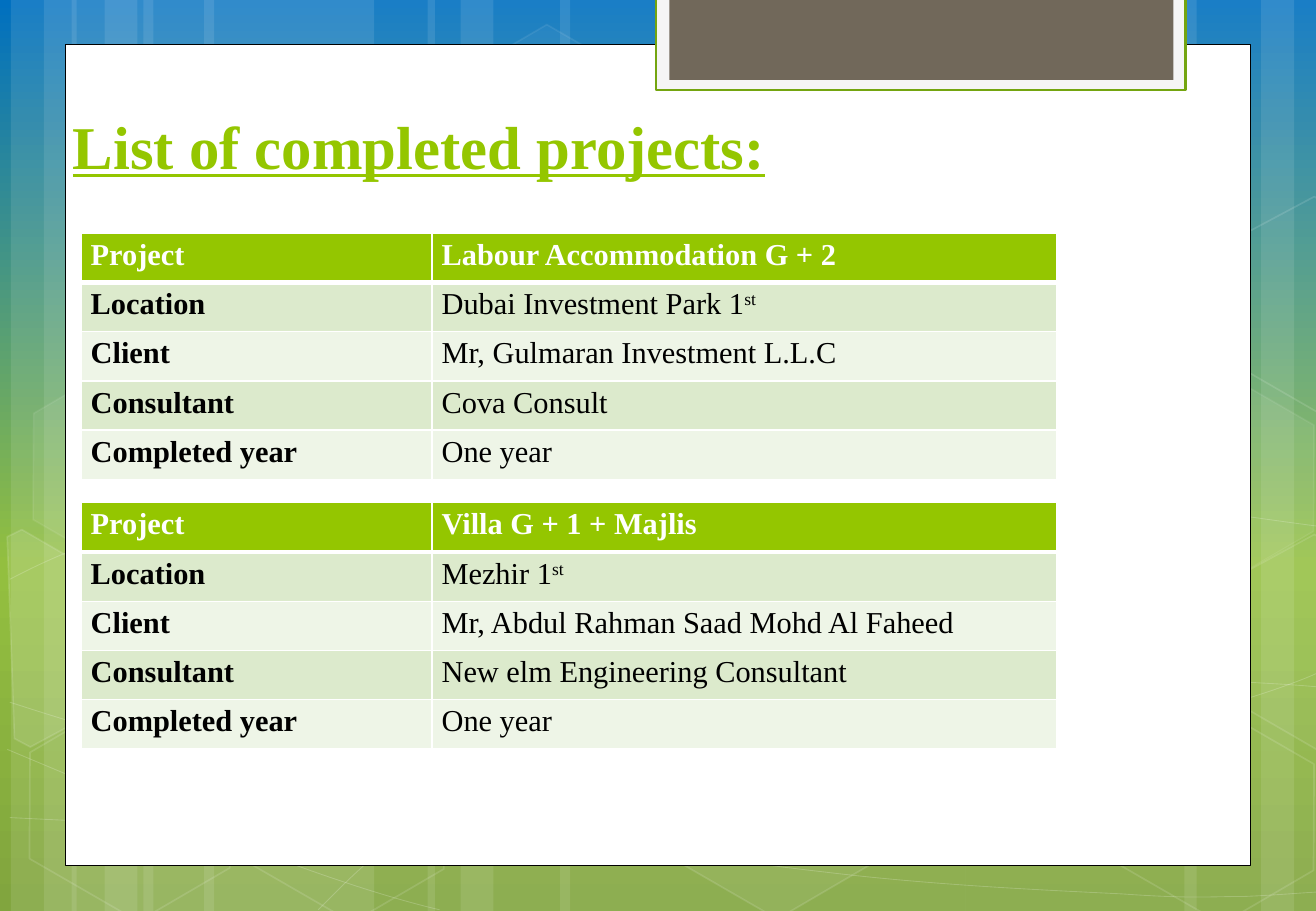
from copy import deepcopy
from dataclasses import dataclass
from typing import Optional

from lxml import etree
from pptx import Presentation
from pptx import util as u
from pptx.dml.color import RGBColor
from pptx.enum import shapes, text
from pptx.oxml.ns import qn

Point = tuple[float, float]
FONT = "Times New Roman"
COLOURS = {
    "white": "FFFFFF", "black": "000000", "lime": "94C600", "band": "DCEACC",
    "pale band": "EEF5E7", "tab": "F5F5F5", "tab edge": "74A510", "brown": "71685A",
    "sky": "0070C0", "grass": "93BF3F", "moss": "81A53E",
}
BACKDROP = [("sky", 0), ("grass", 62), ("moss", 100)]
FIELDS = ["Project", "Location", "Client", "Consultant", "Completed year"]


@dataclass
class Panel:
    left: float
    top: float
    width: float
    height: float
    fill: str
    edge: Optional[str] = None
    edge_width: float = 0


@dataclass
class Hexagon:
    left: float
    top: float
    fill_alpha: Optional[int]
    edge_alpha: int


@dataclass
class Shard:
    corners: list[Point]
    fill_alpha: Optional[int]


@dataclass
class Project:
    top: float
    details: list[str]  # a caret marks the start of a superscript ending


STRIPS = [  # left, width
    (85, 136.8), (6.5, 39), (26, 65), (121, 136.8), (42.5, 39), (62, 65),
    (572.5, 136.8), (747.5, 39), (702, 65), (332, 240.5), (253.5, 39), (273, 65),
]
CURVES: list[list[Point]] = [  # start, then two handles and an end for each bend
    [(5.8, 484.6), (47.5, 486.7), (90, 488.9), (148.3, 488.2),
     (207.4, 487.4), (278.6, 486), (357.1, 478.8), (435.6, 471.6), (545.8, 457.9),
     (617.8, 444.2), (689, 430.6), (761.8, 409), (785.5, 396.7)],
    [(5.8, 343.4), (28.1, 331.9), (50.4, 321.1), (95, 310.3),
     (139, 299.5), (201.6, 283.7), (270.7, 278.6), (340.6, 273.6), (424.1, 272.9),
     (509.8, 278.6), (596.2, 284.4), (738.7, 306.7), (785.5, 312.5)],
    [(4.3, 444.2), (98.6, 483.8), (193, 523.4), (260.6, 539.3)],
    [(5.8, 416.2), (30.2, 424.1), (54.7, 432), (100.1, 443.5),
     (145.4, 454.3), (213.1, 472.3), (277.9, 484.6), (343.4, 496.8), (425.5, 509.8),
     (489.6, 517), (554.4, 524.9), (623.5, 527.8), (665.3, 529.9),
     (706.3, 532.8), (717.1, 531.4), (737.3, 531.4), (756.7, 530.6), (771.1, 529.2),
     (785.5, 528.5)],
    [(188.6, 539.3), (203, 524.9), (216.7, 510.5), (235.4, 497.5),
     (254.2, 484.6), (280.8, 470.2), (302.4, 460.1), (324, 450), (337.7, 445.7),
     (366.5, 438.5), (395.3, 431.3), (447.1, 421.2), (474.5, 416.2),
     (501.8, 411.1), (506.2, 411.1), (530.6, 409.7), (554.4, 407.5), (592.6, 405.4),
     (619.2, 404.6), (646.6, 403.9), (691.2, 404.6), (691.2, 404.6),
     (708.5, 404.6), (725.8, 404.6), (743, 404.6), (757.4, 405.4), (770.4, 406.1),
     (784.8, 407.5)],
]
HEXAGONS = [
    Hexagon(260.6, 25.9, 4, 8), Hexagon(387.4, 424.1, 6, 12),
    Hexagon(8.6, 425.5, None, 12), Hexagon(10.8, 224.6, 7, 8),
    Hexagon(135.4, 426.2, None, 12), Hexagon(587.5, 326.2, 10, 12),
    Hexagon(650.9, 427, None, 12), Hexagon(650.9, 226.1, 7, 8),
]
SHARDS = [
    Shard([(4.3, 318.2), (13, 313.9), (72.7, 348.5), (74.2, 412.6),
           (18, 442.8), (8.6, 437.8)], 10),
    Shard([(722.2, 347.8), (779, 316.8), (784.8, 320.4), (789.1, 443.5),
           (784.1, 446.4), (724.3, 411.8)], 4),
    Shard([(722.2, 146.9), (779, 116.6), (785.5, 120.2), (789.1, 243.4),
           (784.1, 246.2), (724.3, 211.7)], None),
]
PANELS = [
    Panel(38.9, 26.3, 702, 486.6, "white", "black", 0.5),
    Panel(388.8, -1.4, 313.9, 54.7, "tab", "tab edge", 1.25),
    Panel(396.7, -1.4, 298.8, 48.8, "brown"),
]
PROJECTS = [
    Project(138.2, ["Labour Accommodation G + 2", "Dubai Investment Park 1^st",
                    "Mr, Gulmaran Investment L.L.C", "Cova Consult", "One year"]),
    Project(298, ["Villa G + 1 + Majlis", "Mezhir 1^st",
                  "Mr, Abdul Rahman Saad Mohd Al Faheed",
                  "New elm Engineering Consultant", "One year"]),
]


def colour(name: str) -> RGBColor:
    return RGBColor.from_string(COLOURS[name])


def paint(shape, fill: Optional[str], fill_alpha: Optional[int] = None,
          edge: Optional[str] = None, edge_width: float = 0,
          edge_alpha: Optional[int] = None) -> None:
    """Set fill and edge; an alpha is the opacity in percent."""
    shape.shadow.inherit = False
    properties = shape.element.spPr
    for target, name, alpha in ((shape.fill, fill, fill_alpha),
                                (shape.line.fill, edge, edge_alpha)):
        if name is None:
            target.background()
            continue
        target.solid()
        target.fore_color.rgb = colour(name)
        if alpha is not None:
            owner = properties if target is shape.fill else properties.find(qn("a:ln"))
            tint = owner.find(qn("a:solidFill")).find(qn("a:srgbClr"))
            etree.SubElement(tint, qn("a:alpha"), val=str(alpha * 1000))
    if edge:
        shape.line.width = u.Pt(edge_width)


def add_box(slide, kind, left: float, top: float, width: float, height: float):
    return slide.shapes.add_shape(kind, u.Pt(left), u.Pt(top), u.Pt(width), u.Pt(height))


def add_outline(slide, points: list[Point], close: bool):
    corners = [(u.Pt(x), u.Pt(y)) for x, y in points]
    builder = slide.shapes.build_freeform(*corners[0])
    builder.add_line_segments(corners[1:], close=close)
    return builder.convert_to_shape()


def add_curve(slide, points: list[Point]):
    """Draw an outline and join every three of its segments into one Bézier bend."""
    curve = add_outline(slide, points, False)
    route = curve.element.find(".//" + qn("a:path"))
    segments = route.findall(qn("a:lnTo"))
    for start in range(0, len(segments), 3):
        bend = etree.SubElement(route, qn("a:cubicBezTo"))
        for segment in segments[start:start + 3]:
            bend.append(segment[0])
            route.remove(segment)
    return curve


def add_backdrop(slide) -> None:
    fill = slide.background.fill
    fill.gradient()
    fill.gradient_angle = 270
    stops = slide.element.find(".//" + qn("a:gsLst"))
    stops.append(deepcopy(stops[-1]))
    for stop, (name, position) in zip(fill.gradient_stops, BACKDROP):
        stop.color.rgb = colour(name)
        stop.position = position / 100
    for left, width in STRIPS:
        paint(add_box(slide, shapes.MSO_SHAPE.RECTANGLE, left, 0, width, 540), "white", 10)
    for curve in CURVES:
        paint(add_curve(slide, curve), None, None, "white", 0.5, 20)
    for cell in HEXAGONS:
        hexagon = add_box(slide, shapes.MSO_SHAPE.HEXAGON, cell.left, cell.top, 136.8, 109.4)
        hexagon.adjustments[0] = 0.285
        hexagon.rotation = 30
        paint(hexagon, "white" if cell.fill_alpha else None, cell.fill_alpha,
              "white", 1, cell.edge_alpha)
    for shard in SHARDS:
        paint(add_outline(slide, shard.corners, True),
              "white" if shard.fill_alpha else None, shard.fill_alpha, "white", 1, 12)
    for panel in PANELS:
        paint(add_box(slide, shapes.MSO_SHAPE.RECTANGLE, panel.left, panel.top,
                      panel.width, panel.height),
              panel.fill, None, panel.edge, panel.edge_width)


def add_heading(slide) -> None:
    heading = slide.shapes.title
    heading.element.getparent().append(heading.element)  # bring above the panels
    heading.left, heading.top = u.Pt(36), u.Pt(54)
    heading.width, heading.height = u.Pt(599), u.Pt(57)
    frame = heading.text_frame
    frame.text = "List of completed projects:"
    frame.auto_size = text.MSO_AUTO_SIZE.NONE
    frame.vertical_anchor = text.MSO_ANCHOR.BOTTOM
    frame.paragraphs[0].alignment = text.PP_ALIGN.LEFT
    font = frame.paragraphs[0].runs[0].font
    font.name, font.size, font.bold, font.underline = FONT, u.Pt(36), True, True
    font.color.rgb = colour("lime")


def add_borders(cell, bottom_width: float) -> None:
    properties = cell._tc.get_or_add_tcPr()
    for side, width in (("L", 1), ("R", 1), ("T", 1), ("B", bottom_width)):
        border = etree.SubElement(properties, qn("a:ln" + side), w=str(u.Pt(width)))
        fill = etree.SubElement(border, qn("a:solidFill"))
        etree.SubElement(fill, qn("a:srgbClr"), val=COLOURS["white"])


def fill_cell(cell, wording: str, row: int, bold: bool) -> None:
    add_borders(cell, 1 if row else 3)
    cell.fill.solid()
    cell.fill.fore_color.rgb = colour(("pale band", "band")[row % 2] if row else "lime")
    cell.margin_left = cell.margin_right = u.Pt(5.6)
    cell.margin_top = cell.margin_bottom = 0
    paragraph = cell.text_frame.paragraphs[0]
    paragraph.line_spacing = 1.15
    base, _, ending = wording.partition("^")
    paragraph.text = base
    if ending:
        ordinal = paragraph.add_run()
        ordinal.text = ending
        ordinal._r.get_or_add_rPr().set("baseline", "30000")
    for run in paragraph.runs:
        run.font.name, run.font.size, run.font.bold = FONT, u.Pt(18), bold
        run.font.color.rgb = colour("black" if row else "white")


def add_project(slide, project: Project) -> None:
    table = slide.shapes.add_table(len(FIELDS), 2, u.Pt(48.2), u.Pt(project.top),
                                   u.Pt(578), u.Pt(146)).table
    table.columns[0].width, table.columns[1].width = u.Pt(208), u.Pt(370)
    for row, (field, detail) in enumerate(zip(FIELDS, project.details)):
        table.rows[row].height = u.Pt(29.2)
        fill_cell(table.cell(row, 0), field, row, True)
        fill_cell(table.cell(row, 1), detail, row, row == 0)


def main() -> None:
    deck = Presentation()
    deck.slide_width, deck.slide_height = u.Pt(780), u.Pt(540)
    slide = deck.slides.add_slide(deck.slide_layouts[5])
    add_backdrop(slide)
    add_heading(slide)
    for project in PROJECTS:
        add_project(slide, project)
    deck.save("out.pptx")


if __name__ == "__main__":
    main()
